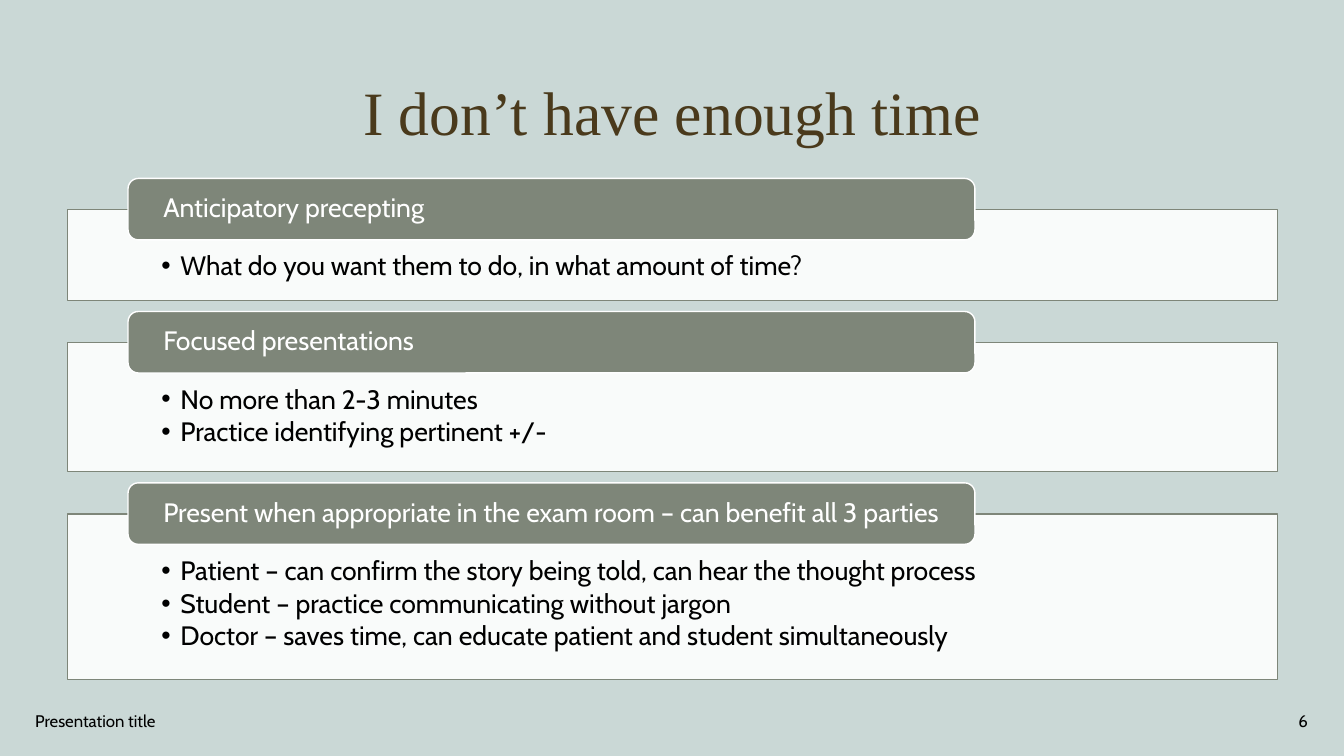
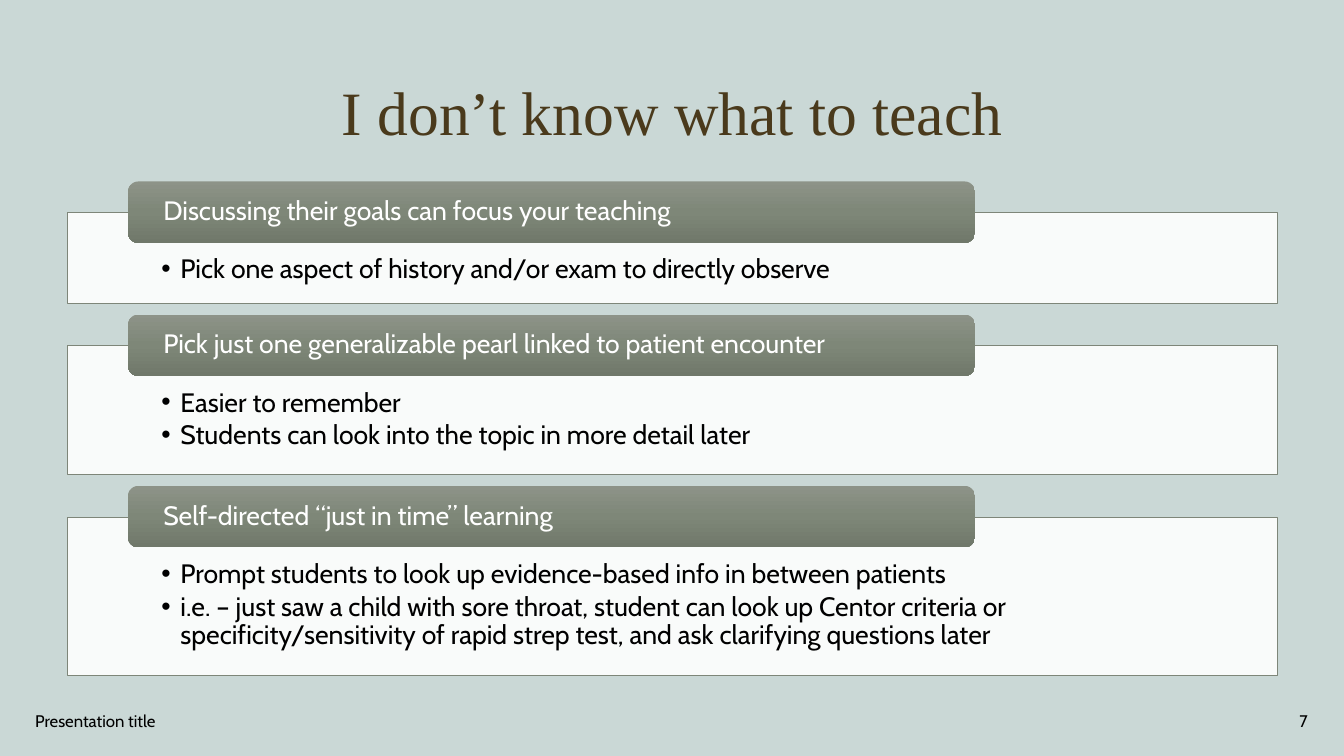
from lxml.etree import SubElement
from pptx import Presentation
from pptx.dml.color import RGBColor
from pptx.enum.shapes import MSO_SHAPE
from pptx.enum.text import MSO_ANCHOR, PP_ALIGN
from pptx.oxml.ns import qn
from pptx.util import Inches, Pt

# Shared look
HUES = {
    "back": "CAD8D6",
    "title": "4A3A1C",
    "ink": "000000",
    "white": "FFFFFF",
    "sage": "7E8679",
}
SHADE = [(0, "8D9388"), (50, "7E8778"), (100, "70786A")]
SERIF, SANS = "Times New Roman", "Cabin"

# Panel geometry, in inches
LEFT, WIDE = 0.67, 12
TAB_LEFT, TAB_WIDE, TAB_HIGH = 1.27, 8.4, 0.61
DROP, GAP = 0.31, 0.11

# Each panel: heading, height of the box, bullets
TIME = [
    ("Anticipatory precepting", 0.9,
     ["What do you want them to do, in what amount of time?"]),
    ("Focused presentations", 1.28,
     ["No more than 2-3 minutes",
      "Practice identifying pertinent +/-"]),
    ("Present when appropriate in the exam room – can benefit all 3 parties", 1.64,
     ["Patient – can confirm the story being told, can hear the thought process",
      "Student – practice communicating without jargon",
      "Doctor – saves time, can educate patient and student simultaneously"]),
]
TEACH = [
    ("Discussing their goals can focus your teaching", 0.9,
     ["Pick one aspect of history and/or exam to directly observe"]),
    ("Pick just one generalizable pearl linked to patient encounter", 1.28,
     ["Easier to remember",
      "Students can look into the topic in more detail later"]),
    ("Self-directed “just in time” learning", 1.57,
     ["Prompt students to look up evidence-based info in between patients",
      "i.e. – just saw a child with sore throat, student can look up Centor criteria "
      "or specificity/sensitivity of rapid strep test, and ask clarifying questions later"]),
]


def rgb(name):
    return RGBColor.from_string(HUES[name])


def write(shape, text, size, hue, font=SANS, align=PP_ALIGN.LEFT,
          anchor=MSO_ANCHOR.MIDDLE, space=None, after=0):
    frame = shape.text_frame
    frame.word_wrap = True
    frame.vertical_anchor = anchor
    frame.text = text
    for para in frame.paragraphs:
        para.alignment = align
        para.line_spacing = space
        para.space_after = Pt(after)
        for run in para.runs:
            run.font.size = Pt(size)
            run.font.name = font
            run.font.color.rgb = rgb(hue)


def pad(shape, left, top, right, base):
    frame = shape.text_frame
    frame.margin_left, frame.margin_right = Inches(left), Inches(right)
    frame.margin_top, frame.margin_bottom = Inches(top), Inches(base)


def label(slide, spot, text, size, hue, **style):
    box = slide.shapes.add_textbox(*map(Inches, spot))
    write(box, text, size, hue, **style)


def block(slide, kind, spot, fill, line, width):
    shape = slide.shapes.add_shape(kind, *map(Inches, spot))
    shape.shadow.inherit = False
    shape.fill.solid()
    shape.fill.fore_color.rgb = rgb(fill)
    if width:
        shape.line.color.rgb = rgb(line)
        shape.line.width = Pt(width)
    else:
        shape.line.fill.background()
    return shape


def fade(shape, alpha):
    color = shape.element.spPr.find(qn("a:solidFill"))[0]
    SubElement(color, qn("a:alpha"), val=str(alpha * 1000))


def blend(shape):
    shape.fill.gradient()
    shape.fill.gradient_angle = 270
    stops = shape.element.spPr.find(qn("a:gradFill")).find(qn("a:gsLst"))
    stops[:] = []
    for place, color in SHADE:
        stop = SubElement(stops, qn("a:gs"), pos=str(place * 1000))
        SubElement(stop, qn("a:srgbClr"), val=color)


def bullet(shape):
    for para in shape.text_frame.paragraphs:
        props = para._p.get_or_add_pPr()
        props.set("marL", str(Inches(0.19)))
        props.set("indent", str(Inches(-0.19)))
        SubElement(props, qn("a:buFont"), typeface="Arial")
        SubElement(props, qn("a:buChar"), char="•")


def panel(slide, top, head, high, items, shaded):
    # White box with bullets
    box = block(slide, MSO_SHAPE.RECTANGLE, (LEFT, top + DROP, WIDE, high),
                "white", "sage", 0.5 if shaded else 1)
    fade(box, 90)
    pad(box, 0.93, 0.43, 0.93, 0.15)
    write(box, "\n".join(items), 19, "ink", anchor=MSO_ANCHOR.TOP,
          space=0.9, after=2.85)
    bullet(box)

    # Heading tab over its top edge; the round corners inset the text a little
    tab = block(slide, MSO_SHAPE.ROUNDED_RECTANGLE,
                (TAB_LEFT, top, TAB_WIDE, TAB_HIGH),
                "sage", "white", 0 if shaded else 1)
    if shaded:
        blend(tab)
    pad(tab, 0.32, 0, 0.1, 0)
    write(tab, head, 19, "white", space=0.9)


def page(deck, title, number, top, panels, shaded=False):
    slide = deck.slides.add_slide(deck.slide_layouts[6])
    slide.background.fill.solid()
    slide.background.fill.fore_color.rgb = rgb("back")

    # Title and footer
    label(slide, (0.92, 0.42, 11.5, 1.45), title, 44, "title",
          font=SERIF, align=PP_ALIGN.CENTER, space=0.9)
    label(slide, (0.25, 6.95, 4.5, 0.4), "Presentation title", 12, "ink", after=6)
    label(slide, (10.07, 6.95, 3, 0.4), str(number), 12, "ink",
          align=PP_ALIGN.RIGHT, after=6)

    # Panels stacked with equal gaps
    for head, high, items in panels:
        panel(slide, top, head, high, items, shaded)
        top += DROP + high + GAP


def main():
    deck = Presentation()
    deck.slide_width, deck.slide_height = Inches(13.33), Inches(7.5)
    page(deck, "I don’t have enough time", 6, 1.77, TIME)
    page(deck, "I don’t know what to teach", 7, 1.8, TEACH, shaded=True)
    deck.save("out.pptx")


if __name__ == "__main__":
    main()
